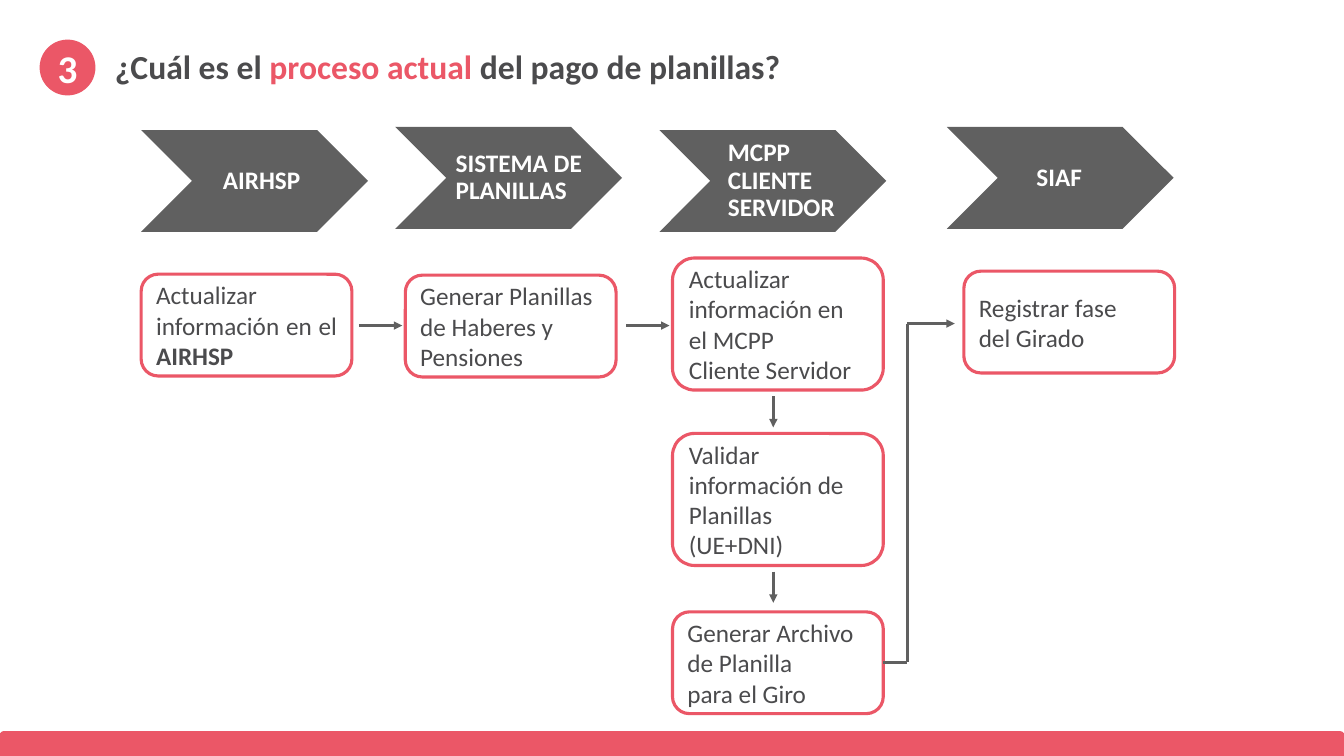
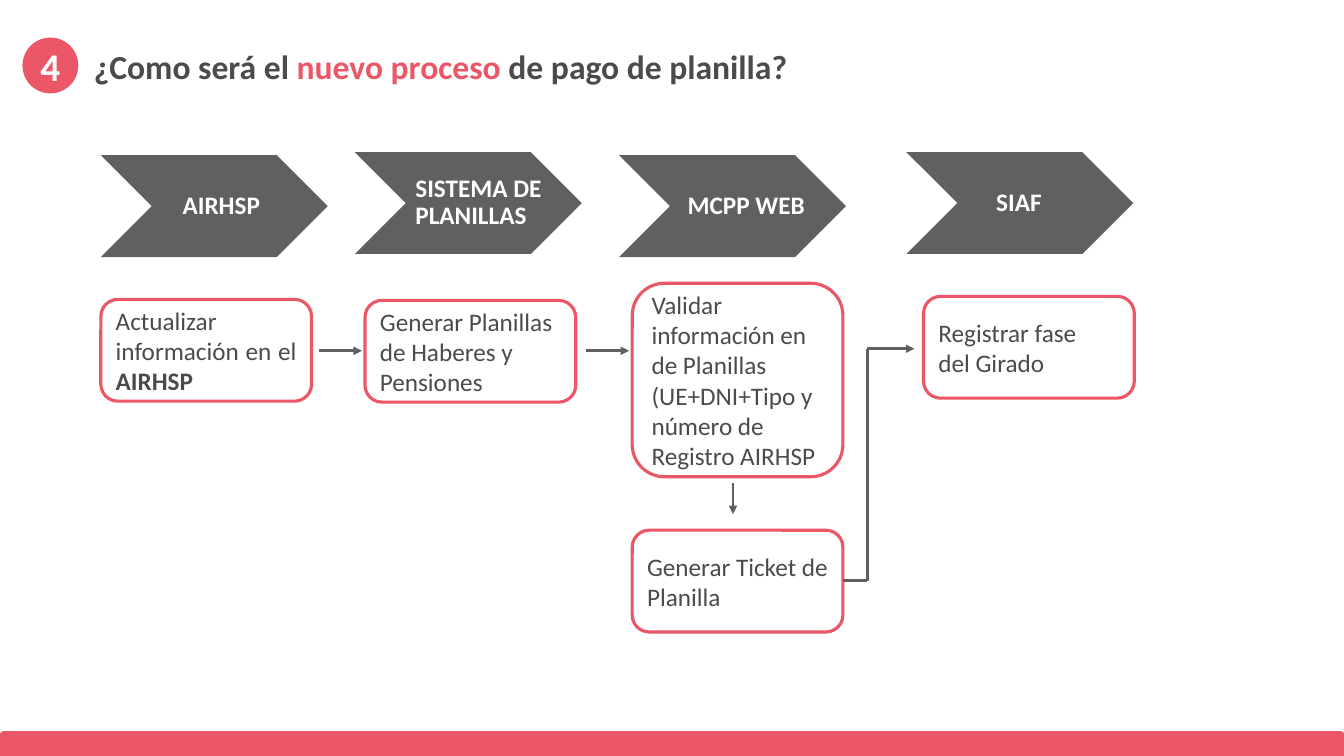
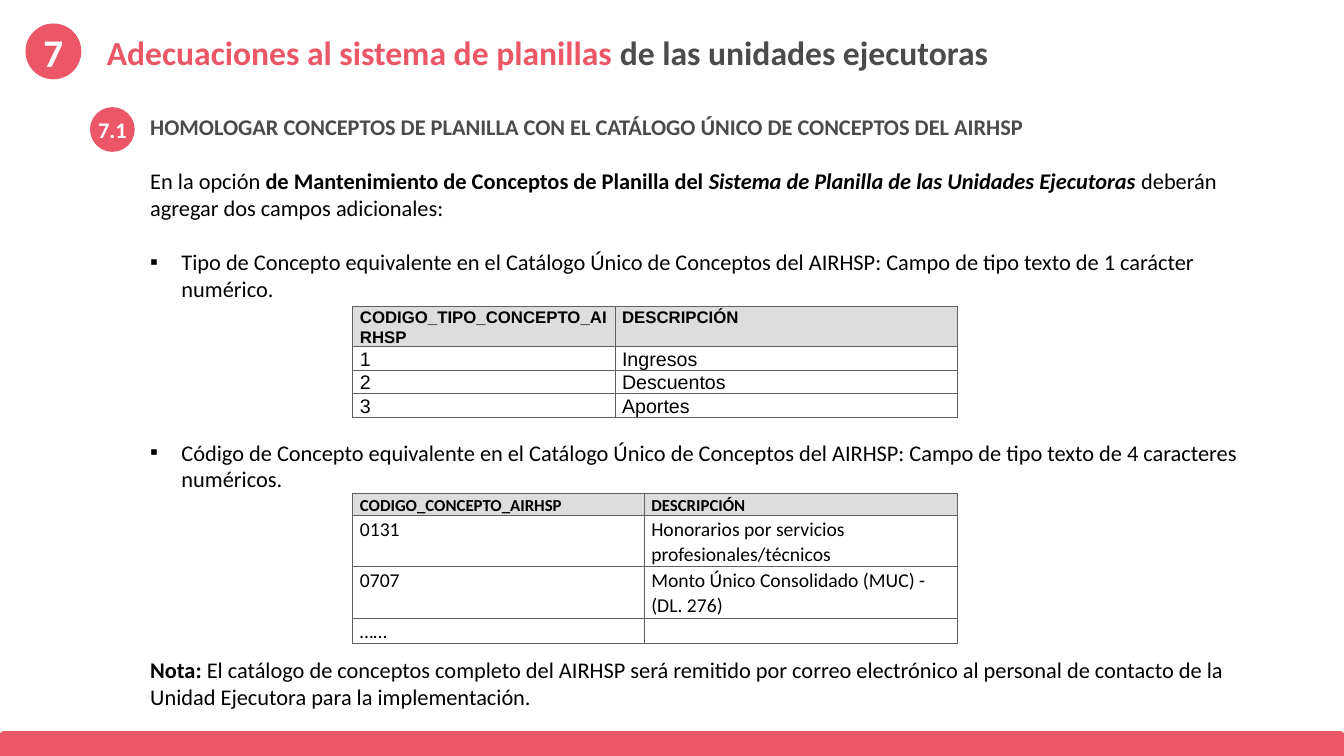
from dataclasses import dataclass
from itertools import pairwise

import pptx
import pptx.dml.color
import pptx.enum.shapes
import pptx.enum.text
import pptx.oxml
import pptx.oxml.ns
import pptx.util
from lxml import etree

Inches = pptx.util.Inches
Pt = pptx.util.Pt
qn = pptx.oxml.ns.qn
SHAPE = pptx.enum.shapes.MSO_SHAPE
ALIGN = pptx.enum.text.PP_ALIGN
ANCHOR = pptx.enum.text.MSO_ANCHOR


@dataclass(frozen=True)
class Theme:
    width: float = 13.33
    height: float = 7.5
    band_height: float = 0.24
    font: str = "Calibri"
    table_font: str = "Arial"
    accent: str = "EB5767"
    ink: str = "4B4B4D"
    steel: str = "606060"
    header_fill: str = "DDDDDD"
    white: str = "FFFFFF"
    black: str = "000000"
    title_size: int = 24
    badge_size: int = 28
    step_size: int = 18
    body_size: int = 16
    cell_size: int = 14
    cell_header_size: int = 12
    body_line: float = 19.53


THEME = Theme()


@dataclass(frozen=True)
class Run:
    text: str
    color: str | None = None
    bold: bool | None = None
    italic: bool | None = None


@dataclass(frozen=True)
class Column:
    """One system of the flow; lengths are relative to the flow's corner."""
    chevron_left: float
    chevron_top: float
    label_shift: float
    label_width: float
    step_left: float
    align: int = ALIGN.LEFT
    label_align: int = ALIGN.LEFT


COLUMNS = (
    Column(0, 0.03, 0.5, 1.35, 0, ALIGN.JUSTIFY, ALIGN.CENTER),
    Column(2.52, 0, 0.54, 1.58, 2.62),
    Column(5.14, 0.03, 0.62, 1.35, 5.27),
    Column(7.99, 0, 0.83, 1.35, 8.16, ALIGN.JUSTIFY),
)
CHEVRON_WIDTH, STEP_WIDTH, ROW_HEIGHT = 2.25, 2.09, 1.01


def rgb(color):
    return pptx.dml.color.RGBColor.from_string(color)


def inches(*lengths):
    return [Inches(round(length, 2)) for length in lengths]


def write(paragraph, runs, size, color, bold=False, font=THEME.font,
          align=ALIGN.LEFT, spacing=1.0, before=0):
    paragraph.alignment = align
    paragraph.line_spacing = spacing
    paragraph.space_before = Pt(before)
    paragraph.font.name = font
    paragraph.font.size = Pt(size)
    paragraph.font.bold = bold
    paragraph.font.color.rgb = rgb(color)
    for item in runs:
        item = Run(item) if isinstance(item, str) else item
        run = paragraph.add_run()
        run.text = item.text
        if item.color:
            run.font.color.rgb = rgb(item.color)
        if item.bold is not None:
            run.font.bold = item.bold
        if item.italic is not None:
            run.font.italic = item.italic
    if not runs:
        etree.SubElement(paragraph._p, qn("a:endParaRPr"), sz=str(size * 100))


def set_frame(frame, margins, anchor=ANCHOR.TOP, wrap=True):
    frame.word_wrap = wrap
    frame.auto_size = pptx.enum.text.MSO_AUTO_SIZE.NONE
    frame.vertical_anchor = anchor
    (frame.margin_left, frame.margin_top,
     frame.margin_right, frame.margin_bottom) = inches(*margins)


def add_shape(shapes, kind, box, fill=None, line=None, line_width=1):
    shape = shapes.add_shape(kind, *inches(*box))
    shape.shadow.inherit = False
    if fill:
        shape.fill.solid()
        shape.fill.fore_color.rgb = rgb(fill)
    else:
        shape.fill.background()
    if line:
        shape.line.color.rgb = rgb(line)
        shape.line.width = Pt(line_width)
    else:
        shape.line.fill.background()
    return shape


def add_badge(slide, left, top, text, diameter=0.54, size=THEME.badge_size):
    badge = add_shape(slide.shapes, SHAPE.OVAL, (left, top, diameter, diameter),
                      THEME.accent, THEME.accent)
    set_frame(badge.text_frame, (0, 0, 0, 0), ANCHOR.MIDDLE, wrap=False)
    write(badge.text_frame.paragraphs[0], [text], size, THEME.white, bold=True,
          align=ALIGN.CENTER)


def place(placeholder, box):
    (placeholder.left, placeholder.top,
     placeholder.width, placeholder.height) = inches(*box)


def add_slide(presentation, layout, number, badge_at, title_at, title_runs):
    """Add a slide with its numbered title and bottom band."""
    slide = presentation.slides.add_slide(presentation.slide_layouts[layout])
    title = slide.shapes.title
    left, top = title_at
    place(title, (left, top, THEME.width - left, 0.78))
    set_frame(title.text_frame, (0.13,) * 4)
    write(title.text_frame.paragraphs[0], title_runs, THEME.title_size, THEME.ink,
          bold=True, spacing=1.15)
    add_badge(slide, *badge_at, number)
    add_shape(slide.shapes, SHAPE.ROUND_2_SAME_RECTANGLE,
              (0, THEME.height - THEME.band_height, THEME.width, THEME.band_height),
              THEME.accent, THEME.accent)
    return slide


def add_line(slide, start, end, arrow=False):
    line = slide.shapes.add_connector(pptx.enum.shapes.MSO_CONNECTOR.STRAIGHT,
                                      *inches(*start, *end))
    line.line.color.rgb = rgb(THEME.steel)
    line.line.width = Pt(2)
    properties = line.element.spPr
    if arrow:
        etree.SubElement(properties.find(qn("a:ln")), qn("a:tailEnd"), type="triangle")
    etree.SubElement(properties, qn("a:effectLst"))


def add_chevron(slide, origin, column, label):
    left, top = origin[0] + column.chevron_left, origin[1] + column.chevron_top
    group = slide.shapes.add_group_shape()
    add_shape(group.shapes, SHAPE.CHEVRON, (left, top, CHEVRON_WIDTH, ROW_HEIGHT),
              THEME.steel)
    text_box = group.shapes.add_textbox(
        *inches(left + column.label_shift, top, column.label_width, ROW_HEIGHT))
    set_frame(text_box.text_frame, (0.06, 0.02, 0.02, 0.02), ANCHOR.MIDDLE)
    write(text_box.text_frame.paragraphs[0], [label], THEME.step_size, THEME.white,
          bold=True, align=column.label_align, spacing=0.9)


def add_step(slide, origin, column, top, height, paragraphs):
    step = add_shape(slide.shapes, SHAPE.ROUNDED_RECTANGLE,
                     (origin[0] + column.step_left, origin[1] + top, STEP_WIDTH, height),
                     line=THEME.accent, line_width=2.25)
    frame = step.text_frame
    set_frame(frame, (0.1, 0.05, 0.1, 0.05), ANCHOR.MIDDLE)
    for index, runs in enumerate(paragraphs):
        paragraph = frame.add_paragraph() if index else frame.paragraphs[0]
        write(paragraph, runs, THEME.step_size, THEME.ink, align=column.align)


def add_flow(slide, origin, third_system, third_steps):
    """Draw the four systems; third_steps holds (top, height, paragraphs)."""
    labels = ("AIRHSP", "SISTEMA DE PLANILLAS", third_system, "SIAF")
    for column, label in zip(COLUMNS, labels):
        add_chevron(slide, origin, column, label)

    payroll, generation, control, payment = COLUMNS
    add_step(slide, origin, payroll, 1.46, ROW_HEIGHT,
             [["Actualizar información en el ", Run("AIRHSP", bold=True)]])
    add_step(slide, origin, generation, 1.47, ROW_HEIGHT,
             [["Generar Planillas de Haberes y Pensiones"]])
    for top, height, paragraphs in third_steps:
        add_step(slide, origin, control, top, height, paragraphs)
    add_step(slide, origin, payment, 1.43, ROW_HEIGHT,
             [["Registrar fase"], ["del Girado"]])

    def at(x, y):
        return origin[0] + x, origin[1] + y

    for column in (generation, control):
        tip = column.step_left - 0.03
        add_line(slide, at(tip - 0.43, 1.97), at(tip, 1.97), arrow=True)
    for top, height, _ in third_steps[:-1]:
        start = top + height + 0.06
        add_line(slide, at(6.27, start), at(6.27, start + 0.31), arrow=True)

    last_top, last_height, _ = third_steps[-1]
    middle = last_top + last_height / 2
    edge = control.step_left + STEP_WIDTH
    turn = edge + 0.24
    route = [at(edge, middle), at(turn, middle), at(turn, 1.95), at(8.07, 1.95)]
    for start, end in pairwise(route):
        add_line(slide, start, end, arrow=end == route[-1])


def set_bullet(paragraph, bulleted):
    properties = paragraph._p.get_or_add_pPr()
    indent = Inches(0.31) if bulleted else 0
    properties.set("marL", str(indent))
    properties.set("indent", str(-indent))
    if bulleted:
        etree.SubElement(properties, qn("a:buFont"), typeface="Arial")
        etree.SubElement(properties, qn("a:buChar"), char="▪")
    else:
        etree.SubElement(properties, qn("a:buNone"))


def add_body(slide, box, entries):
    """Fill the body; each entry is (lines of space before, bulleted, color, bold, runs)."""
    body = slide.placeholders[1]
    place(body, box)
    set_frame(body.text_frame, (0.1, 0.05, 0.1, 0.05))
    for index, (gap, bulleted, color, bold, runs) in enumerate(entries):
        frame = body.text_frame
        paragraph = frame.add_paragraph() if index else frame.paragraphs[0]
        set_bullet(paragraph, bulleted)
        write(paragraph, runs, THEME.body_size, color, bold=bold,
              before=gap * THEME.body_line)


def set_borders(cell):
    properties = cell._tc.get_or_add_tcPr()
    for side in ("a:lnL", "a:lnR", "a:lnT", "a:lnB"):
        border = etree.SubElement(properties, qn(side), w=str(Pt(0.75)))
        fill = etree.SubElement(border, qn("a:solidFill"))
        etree.SubElement(fill, qn("a:srgbClr"), val=THEME.steel)


def add_code_table(slide, left, top, widths, rows, font, text_align):
    heights = [0.17] + [0.19] * (len(rows) - 1)
    table = slide.shapes.add_table(
        len(rows), len(widths),
        *inches(left, top, sum(widths), sum(heights))).table
    table.first_row = table.horz_banding = False
    for column, width in zip(table.columns, widths):
        column.width = Inches(width)
    for row_index, (height, texts) in enumerate(zip(heights, rows)):
        table.rows[row_index].height = Inches(height)
        header = row_index == 0
        for column_index, text in enumerate(texts):
            cell = table.cell(row_index, column_index)
            cell.margin_left = cell.margin_right = Inches(0.07)
            cell.margin_top = cell.margin_bottom = 0
            set_borders(cell)
            if header:
                cell.fill.solid()
                cell.fill.fore_color.rgb = rgb(THEME.header_fill)
            else:
                cell.fill.background()
            size = THEME.cell_header_size if header else THEME.cell_size
            align = text_align if column_index and not header else ALIGN.JUSTIFY
            write(cell.text_frame.paragraphs[0], [text] if text else [], size,
                  THEME.black, bold=header, font=font, align=align, spacing=1.07)


def build_current_process(presentation):
    slide = add_slide(presentation, 5, "3", (0.4, 0.4), (1.01, 0.27),
                      ["¿Cuál es el ", Run("proceso actual", THEME.accent),
                       " del pago de planillas?"])
    add_flow(slide, (1.4, 1.26), "MCPP CLIENTE SERVIDOR", [
        (1.3, 1.31, [["Actualizar información en el MCPP"], ["Cliente Servidor"]]),
        (3.04, 1.31, [["Validar información de Planillas (UE+DNI)"]]),
        (4.81, ROW_HEIGHT, [["Generar Archivo de Planilla"], ["para el Giro"]]),
    ])


def build_new_process(presentation):
    slide = add_slide(presentation, 5, "4", (0.23, 0.38), (0.8, 0.27),
                      ["¿Como será el ", Run("nuevo proceso ", THEME.accent),
                       "de pago de planilla?"])
    add_flow(slide, (1, 1.51), "MCPP WEB", [
        (1.3, 1.92, [["Validar información en de Planillas "
                      "(UE+DNI+Tipo y número de Registro AIRHSP"]]),
        (3.75, ROW_HEIGHT, [["Generar Ticket de Planilla"]]),
    ])


def build_adjustments(presentation):
    slide = add_slide(presentation, 1, "7", (0.26, 0.24), (0.93, 0.13),
                      [Run("Adecuaciones al sistema de planillas ", THEME.accent),
                       "de las unidades ejecutoras"])
    add_badge(slide, 0.9, 1.07, "7.1", diameter=0.43, size=THEME.body_size)
    add_body(slide, (1.39, 1.07, 11.39, 6.02), [
        (0, False, THEME.ink, True,
         ["HOMOLOGAR CONCEPTOS DE PLANILLA CON EL CATÁLOGO ÚNICO DE CONCEPTOS DEL AIRHSP"]),
        (1, False, THEME.black, False,
         ["En la opción ",
          Run("de Mantenimiento de Conceptos de Planilla del ", bold=True),
          Run("Sistema de Planilla de las Unidades Ejecutoras ", bold=True, italic=True),
          "deberán agregar dos campos adicionales:"]),
        (1, True, THEME.black, False,
         ["Tipo de Concepto equivalente en el Catálogo Único de Conceptos del AIRHSP: "
          "Campo de tipo texto de 1 carácter numérico."]),
        (5, True, THEME.black, False,
         ["Código de Concepto equivalente en el Catálogo Único de Conceptos del AIRHSP: "
          "Campo de tipo texto de 4 caracteres numéricos."]),
        (6, False, THEME.black, False,
         [Run("Nota:", bold=True),
          " El catálogo de conceptos completo del AIRHSP será remitido por correo "
          "electrónico al personal de contacto de la Unidad Ejecutora para la "
          "implementación."]),
    ])
    add_code_table(slide, 3.5, 3.04, (2.6, 3.4), [
        ("CODIGO_TIPO_CONCEPTO_AIRHSP", "DESCRIPCIÓN"),
        ("1", "Ingresos"),
        ("2", "Descuentos"),
        ("3", "Aportes"),
    ], THEME.table_font, ALIGN.JUSTIFY)
    add_code_table(slide, 3.5, 4.9, (2.89, 3.11), [
        ("CODIGO_CONCEPTO_AIRHSP", "DESCRIPCIÓN"),
        ("0131", "Honorarios por servicios profesionales/técnicos"),
        ("0707", "Monto Único Consolidado (MUC) - (DL. 276)"),
        ("……", ""),
    ], THEME.font, ALIGN.LEFT)


def main():
    presentation = pptx.Presentation()
    presentation.slide_width, presentation.slide_height = inches(THEME.width, THEME.height)
    build_current_process(presentation)
    build_new_process(presentation)
    build_adjustments(presentation)
    presentation.save("out.pptx")


if __name__ == "__main__":
    main()
